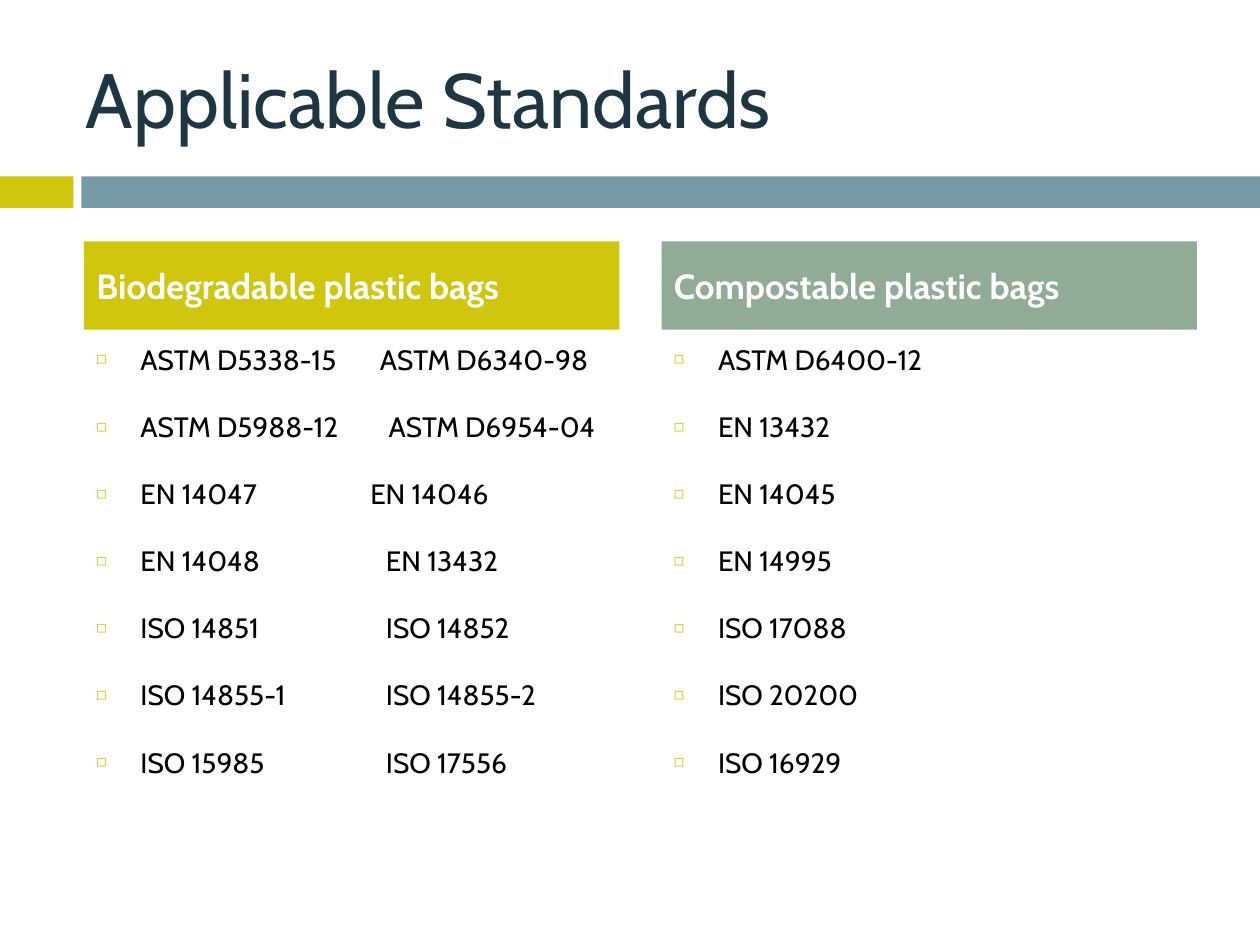
from lxml.etree import SubElement
from pptx import Presentation
from pptx.dml.color import RGBColor
from pptx.enum.shapes import MSO_SHAPE
from pptx.enum.text import MSO_ANCHOR, PP_ALIGN
from pptx.oxml.ns import qn
from pptx.util import Pt

LIME, BLUE, SAGE, NAVY = "CFC60D", "759AA5", "90AC97", "1D3641"
BOX_WIDTH = 306


def add_block(left, top, width, height, fill=None):
    """Add a rectangle, filled or clear, with left-aligned text."""
    block = slide.shapes.add_shape(
        MSO_SHAPE.RECTANGLE, Pt(left), Pt(top), Pt(width), Pt(height))
    block.shadow.inherit = False
    block.line.fill.background()
    if fill:
        block.fill.solid()
        block.fill.fore_color.rgb = RGBColor.from_string(fill)
    else:
        block.fill.background()
    block.text_frame.word_wrap = True
    block.text_frame.vertical_anchor = MSO_ANCHOR.MIDDLE
    block.text_frame.paragraphs[0].alignment = PP_ALIGN.LEFT
    return block


def style(paragraph, size, color, bold=False):
    """Set the font of every run in a paragraph."""
    for run in paragraph.runs:
        run.font.name = "Cabin"
        run.font.size = Pt(size)
        run.font.bold = bold
        run.font.color.rgb = RGBColor.from_string(color)


prs = Presentation()
prs.slide_width, prs.slide_height = Pt(720), Pt(540)
slide = prs.slides.add_slide(prs.slide_layouts[6])

add_block(0, 100.8, 42, 18, LIME)
add_block(46.5, 100.8, 673.5, 18, BLUE)

title = add_block(42, 21.6, 642, 68.4).text_frame
title.text = "Applicable Standards"
style(title.paragraphs[0], 44, NAVY)

# Each standard is paired with the tab stop of its second entry, if any
biodegradable = [
    ("ASTM D5338-15\tASTM D6340-98", 162),
    ("ASTM D5988-12\tASTM D6954-04", 167),
    ("EN 14047\tEN 14046", 156.5),
    ("EN 14048\tEN 13432", 165.5),
    ("ISO 14851\tISO 14852", 165.5),
    ("ISO 14855-1\tISO 14855-2", 165.5),
    ("ISO 15985\tISO 17556", 165.5),
]
compostable = [(name, None) for name in (
    "ASTM D6400-12", "EN 13432", "EN 14045", "EN 14995",
    "ISO 17088", "ISO 20200", "ISO 16929")]
columns = [
    (48, "Biodegradable plastic bags", LIME, biodegradable),
    (378, "Compostable plastic bags", SAGE, compostable),
]

for left, heading, fill, standards in columns:
    header = add_block(left, 138, BOX_WIDTH, 50.4, fill).text_frame
    header.text = heading
    header.paragraphs[0].space_before = Pt(7)
    style(header.paragraphs[0], 20, "FFFFFF", bold=True)

    body = slide.shapes.add_textbox(
        Pt(left), Pt(192), Pt(BOX_WIDTH), Pt(282)).text_frame
    body.word_wrap = True
    body.text = "\n".join(name for name, stop in standards)
    for paragraph, (name, stop) in zip(body.paragraphs, standards):
        paragraph.space_after = Pt(19.2)
        style(paragraph, 16, "000000")
        props = paragraph._p.get_or_add_pPr()
        props.set("marL", str(Pt(25.2)))
        props.set("indent", str(Pt(-25.2)))
        bullet_color = SubElement(props, qn("a:buClr"))
        SubElement(bullet_color, qn("a:srgbClr"), val=LIME)
        SubElement(props, qn("a:buSzPct"), val="60000")
        SubElement(props, qn("a:buFont"), typeface="Cabin")
        SubElement(props, qn("a:buChar"), char="\u25fb")
        if stop:
            tabs = SubElement(props, qn("a:tabLst"))
            SubElement(tabs, qn("a:tab"), pos=str(Pt(stop)), algn="l")

prs.save("out.pptx")
